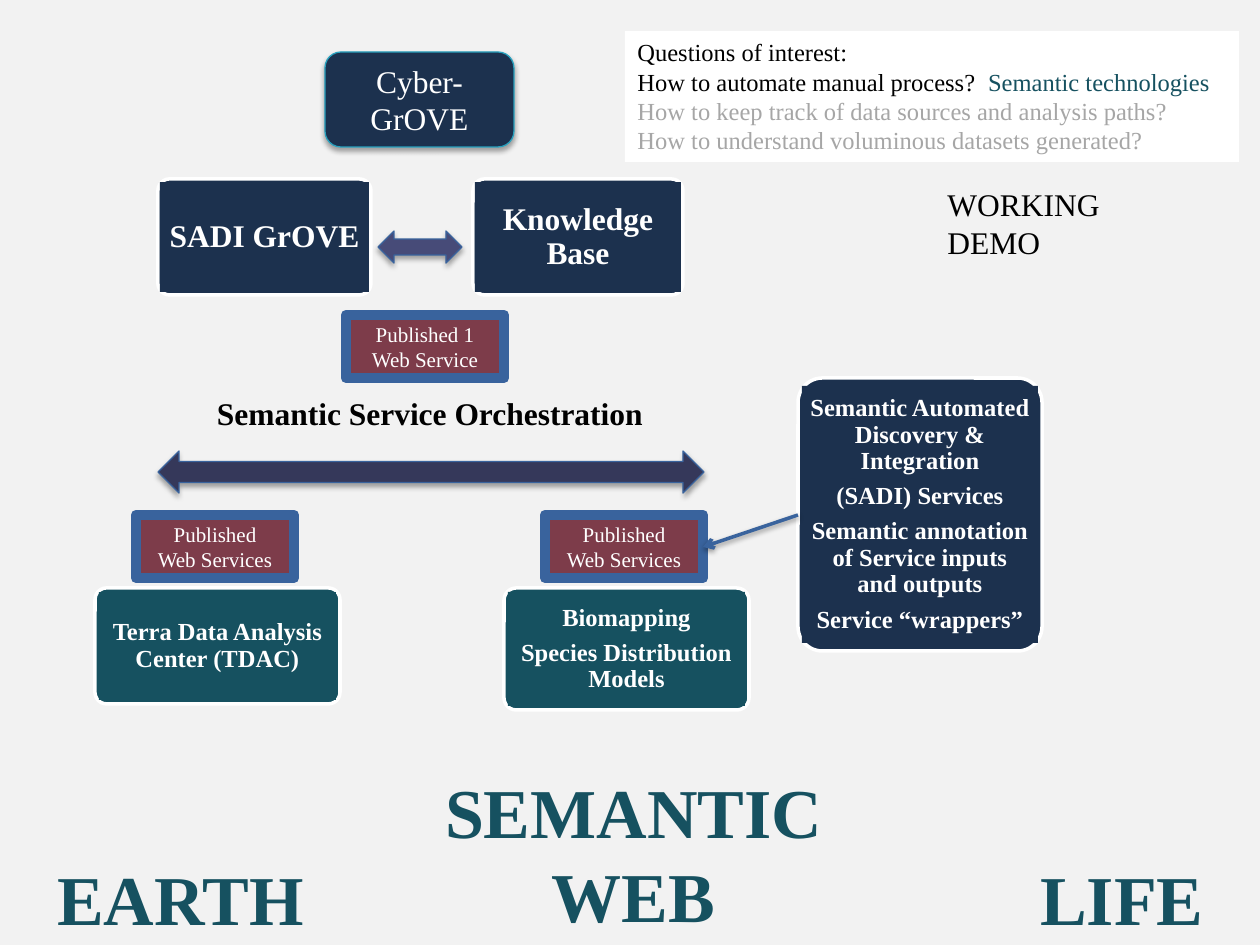
from lxml import etree
from pptx import Presentation
from pptx.dml.color import RGBColor
from pptx.enum.shapes import MSO_CONNECTOR, MSO_SHAPE
from pptx.enum.text import MSO_ANCHOR, PP_ALIGN
from pptx.oxml.ns import qn
from pptx.util import Emu, Pt

RECT, ROUND = MSO_SHAPE.RECTANGLE, MSO_SHAPE.ROUNDED_RECTANGLE
ARROW = MSO_SHAPE.LEFT_RIGHT_ARROW
LEFT, CENTER = PP_ALIGN.LEFT, PP_ALIGN.CENTER
TOP, MIDDLE = MSO_ANCHOR.TOP, MSO_ANCHOR.MIDDLE

PAPER = RGBColor(0xF2, 0xF2, 0xF2)
WHITE = RGBColor(0xFF, 0xFF, 0xFF)
BLACK = RGBColor(0x00, 0x00, 0x00)
GREY = RGBColor(0xA6, 0xA6, 0xA6)
NAVY = RGBColor(0x1C, 0x31, 0x4E)
TEAL = RGBColor(0x16, 0x51, 0x60)
AQUA = RGBColor(0x28, 0xA1, 0xBE)
BLUE = RGBColor(0x39, 0x63, 0x9D)
WINE = RGBColor(0x7D, 0x3C, 0x4A)
SLATE = RGBColor(0x47, 0x4B, 0x78)
DUSK = RGBColor(0x35, 0x38, 0x5A)

FONT = "Times New Roman"
SCALE = 914400 / 126


def px(n):
    return Emu(round(n * SCALE))


def style(run, size, color, bold=False):
    font = run.font
    font.name, font.size, font.bold = FONT, Pt(size), bold
    font.color.rgb = color


def write(shape, lines, size, color=WHITE, bold=False, align=CENTER,
          anchor=MIDDLE, wrap=True):
    frame = shape.text_frame
    frame.word_wrap, frame.vertical_anchor = wrap, anchor
    frame.text = "\n".join(lines)
    for para in frame.paragraphs:
        para.alignment = align
        for run in para.runs:
            style(run, size, color, bold)
    return frame


def shade(shape, alpha=35, dist=1.8):
    """Drop a soft shadow straight down."""
    props = shape._element.spPr
    for old in props.findall(qn("a:effectLst")):
        props.remove(old)
    effects = etree.SubElement(props, qn("a:effectLst"))
    drop = etree.SubElement(effects, qn("a:outerShdw"), blurRad=str(Pt(3.1)),
                            dist=str(Pt(dist)), dir="5400000", rotWithShape="0")
    tint = etree.SubElement(drop, qn("a:srgbClr"), val=str(BLACK))
    etree.SubElement(tint, qn("a:alpha"), val=str(alpha * 1000))


def block(slide, kind, box, fill, line=None, width=0.75):
    shape = slide.shapes.add_shape(kind, *map(px, box))
    shape.shadow.inherit = False
    shape.fill.solid()
    shape.fill.fore_color.rgb = fill
    if line is None:
        shape.line.fill.background()
    else:
        shape.line.color.rgb = line
        shape.line.width = Pt(width)
    return shape


def label(slide, box, lines, size, color, bold=False, align=CENTER, wrap=True):
    shape = slide.shapes.add_textbox(*map(px, box))
    write(shape, lines, size, color, bold, align, TOP, wrap)


def card(slide, box, fill, lines, size, dx, dy):
    """Rounded white-edged frame with a text panel set in by dx and dy."""
    x, y, w, h = box
    frame = block(slide, ROUND, box, fill, WHITE, 2)
    frame.adjustments[0] = 0.1
    panel = block(slide, RECT, (x + dx, y + dy, w - 2 * dx, h - 2 * dy), fill)
    text = write(panel, lines, size, bold=True)
    text.margin_left = text.margin_right = px(8)
    text.margin_top = text.margin_bottom = px(8)
    for para in text.paragraphs:
        para.line_spacing = 0.9
        para.space_after = Pt(0.35 * size)


def tag(slide, x, y, lines):
    write(block(slide, RECT, (x, y, 158, 63), WINE, BLUE, 6), lines, 12)


def node(slide, box, lines):
    """Data centre card with its published services above it."""
    x, y, w, h = box
    tag(slide, x + 41, y - 73, ["Published", "Web Services"])
    card(slide, box, TEAL, lines, 14, 4, 4)


def quiz(slide, box):
    lines = ["Questions of interest:", "How to automate manual process?  ",
             "How to keep track of data sources and analysis paths?",
             "How to understand voluminous datasets generated?"]
    frame = write(block(slide, RECT, box, WHITE), lines, 14, BLACK,
                  align=LEFT, anchor=TOP)
    run = frame.paragraphs[1].add_run()
    run.text = "Semantic technologies"
    style(run, 14, TEAL)
    for para in frame.paragraphs[2:]:
        para.runs[0].font.color.rgb = GREY


def hub(slide, box):
    """Top pair of cards, their links and the orchestration caption."""
    x, y, w, h = box
    tag(slide, x + 188, y + 136, ["Published 1", "Web Service"])
    card(slide, (x, y, 213, 116), NAVY, ["SADI GrOVE"], 18, 2, 3)
    card(slide, (x + 315, y, 210, 116), NAVY, ["Knowledge Base"], 18, 2, 3)
    label(slide, (x + 41, y + 209, 462, 50),
          ["Semantic Service Orchestration"], 18, BLACK, True)
    shade(block(slide, ARROW, (x + 220, y + 52, 84, 32), SLATE, BLUE))
    shade(block(slide, ARROW, (x, y + h - 42, w, 42), DUSK, BLUE))


def pointer(slide, start, end):
    line = slide.shapes.add_connector(MSO_CONNECTOR.STRAIGHT,
                                      *map(px, start + end))
    line.line.color.rgb = BLUE
    line.line.width = Pt(2)
    etree.SubElement(line.line._get_or_add_ln(), qn("a:tailEnd"), type="arrow")
    shade(line, 38, 1.6)


def main():
    deck = Presentation()
    deck.slide_width, deck.slide_height = px(1260), px(945)
    slide = deck.slides.add_slide(deck.slide_layouts[6])
    slide.background.fill.solid()
    slide.background.fill.fore_color.rgb = PAPER

    quiz(slide, (625, 31, 614, 131))
    card(slide, (798, 378, 244, 273), NAVY,
         ["Semantic Automated Discovery & Integration", "(SADI) Services",
          "Semantic annotation of Service inputs and outputs",
          "Service “wrappers”"], 14, 4, 8)
    node(slide, (95, 588, 245, 116), ["Terra Data Analysis Center (TDAC)"])
    node(slide, (504, 588, 245, 122),
         ["Biomapping", "Species Distribution Models"])
    pointer(slide, (798, 515), (703, 547))
    hub(slide, (158, 179, 546, 314))

    crown = block(slide, ROUND, (325, 52, 189, 95), NAVY, AQUA)
    shade(crown)
    write(crown, ["Cyber-GrOVE"], 18)
    label(slide, (935, 179, 248, 50), ["WORKING DEMO"], 18, BLACK, align=LEFT)
    for box, lines in [((43, 849, 275, 97), ["EARTH"]),
                       ((1027, 849, 190, 97), ["LIFE"]),
                       ((430, 762, 407, 183), ["SEMANTIC", "WEB"])]:
        label(slide, box, lines, 40, TEAL, True, wrap=False)

    deck.save("out.pptx")


if __name__ == "__main__":
    main()
